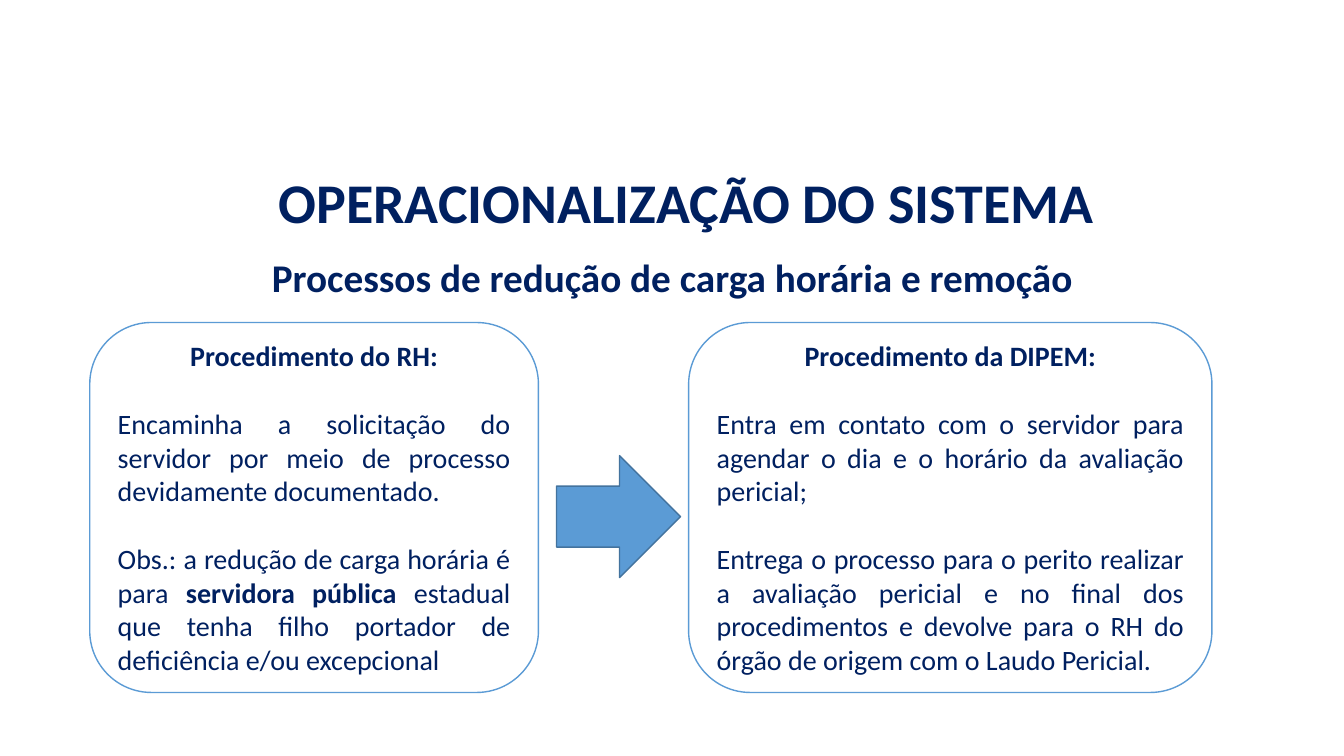
from lxml.etree import SubElement
from pptx import Presentation
from pptx.dml.color import RGBColor
from pptx.enum.shapes import MSO_SHAPE as Preset
from pptx.enum.text import MSO_ANCHOR as Anchor, MSO_AUTO_SIZE as AutoSize, PP_ALIGN as Align
from pptx.oxml.ns import qn
from pptx.util import Inches, Pt

COLORS = {"navy": "002060", "blue": "5B9BD5", "steel": "43739E", "white": "FFFFFF"}
FONT = "Calibri"
CARD_TOP, CARD_HEIGHT = 3.2, 3.67
PARAGRAPH_GAP = 24.4  # one line of 20 pt text

RH_CARD = [
    [("Procedimento do RH:", True)],
    [("Encaminha a solicitação do servidor por meio de processo devidamente documentado.", False)],
    [("Obs.: a redução de carga horária é para ", False),
     ("servidora pública ", True),
     ("estadual que tenha filho portador de deficiência e/ou excepcional", False)],
]
DIPEM_CARD = [
    [("Procedimento da DIPEM:", True)],
    [("Entra em contato com o servidor para agendar o dia e o horário da avaliação pericial;", False)],
    [("Entrega o processo para o perito realizar a avaliação pericial e no final dos "
      "procedimentos e devolve para o RH do órgão de origem com o Laudo Pericial.", False)],
]


def color(name):
    return RGBColor.from_string(COLORS[name])


def add_run(paragraph, text, size, bold):
    run = paragraph.add_run()
    run.text = text
    run.font.name = FONT
    run.font.size = Pt(size)
    run.font.bold = bold
    run.font.color.rgb = color("navy")


def fill_placeholder(placeholder, box, text, size, anchor):
    """Place a placeholder and give it one centred, unbulleted heading."""
    placeholder.left, placeholder.top, placeholder.width, placeholder.height = map(Inches, box)
    frame = placeholder.text_frame
    frame.auto_size = AutoSize.NONE
    frame.vertical_anchor = anchor
    paragraph = frame.paragraphs[0]
    properties = paragraph._p.get_or_add_pPr()
    properties.set("marL", "0")
    properties.set("indent", "0")
    SubElement(properties, qn("a:buNone"))
    paragraph.alignment = Align.CENTER
    paragraph.line_spacing = 0.9
    paragraph.space_before = Pt(0)
    add_run(paragraph, text, size, True)


def add_preset(slide, preset, box, fill, line):
    shape = slide.shapes.add_shape(preset, *map(Inches, box))
    shape.shadow.inherit = False
    shape.fill.solid()
    shape.fill.fore_color.rgb = color(fill)
    shape.line.color.rgb = color(line)
    shape.line.width = Pt(1)
    return shape


def add_card(slide, left, width, content):
    """Rounded card: centred heading, then justified paragraphs."""
    box = (left, CARD_TOP, width, CARD_HEIGHT)
    frame = add_preset(slide, Preset.ROUNDED_RECTANGLE, box, "white", "blue").text_frame
    frame.word_wrap = True
    frame.vertical_anchor = Anchor.MIDDLE
    for index, runs in enumerate(content):
        paragraph = frame.add_paragraph() if index else frame.paragraphs[0]
        paragraph.alignment = Align.JUSTIFY if index else Align.CENTER
        paragraph.space_before = Pt(PARAGRAPH_GAP if index else 0)
        for text, bold in runs:
            add_run(paragraph, text, 20, bold)


def main():
    presentation = Presentation()
    presentation.slide_width, presentation.slide_height = Inches(13.33), Inches(7.5)
    slide = presentation.slides.add_slide(presentation.slide_layouts[1])

    # Headings
    title, body = slide.placeholders
    fill_placeholder(title, (1.14, 1.55, 11.33, 0.98),
                     "OPERACIONALIZAÇÃO DO SISTEMA", 40, Anchor.MIDDLE)
    fill_placeholder(body, (1, 2.52, 11.33, 4.35),
                     "Processos de redução de carga horária e remoção", 28, Anchor.TOP)

    # Flow from RH to DIPEM
    add_card(slide, 0.89, 4.45, RH_CARD)
    add_preset(slide, Preset.RIGHT_ARROW, (5.52, 4.52, 1.23, 1.21), "blue", "steel")
    add_card(slide, 6.83, 5.19, DIPEM_CARD)

    presentation.save("out.pptx")


if __name__ == "__main__":
    main()
